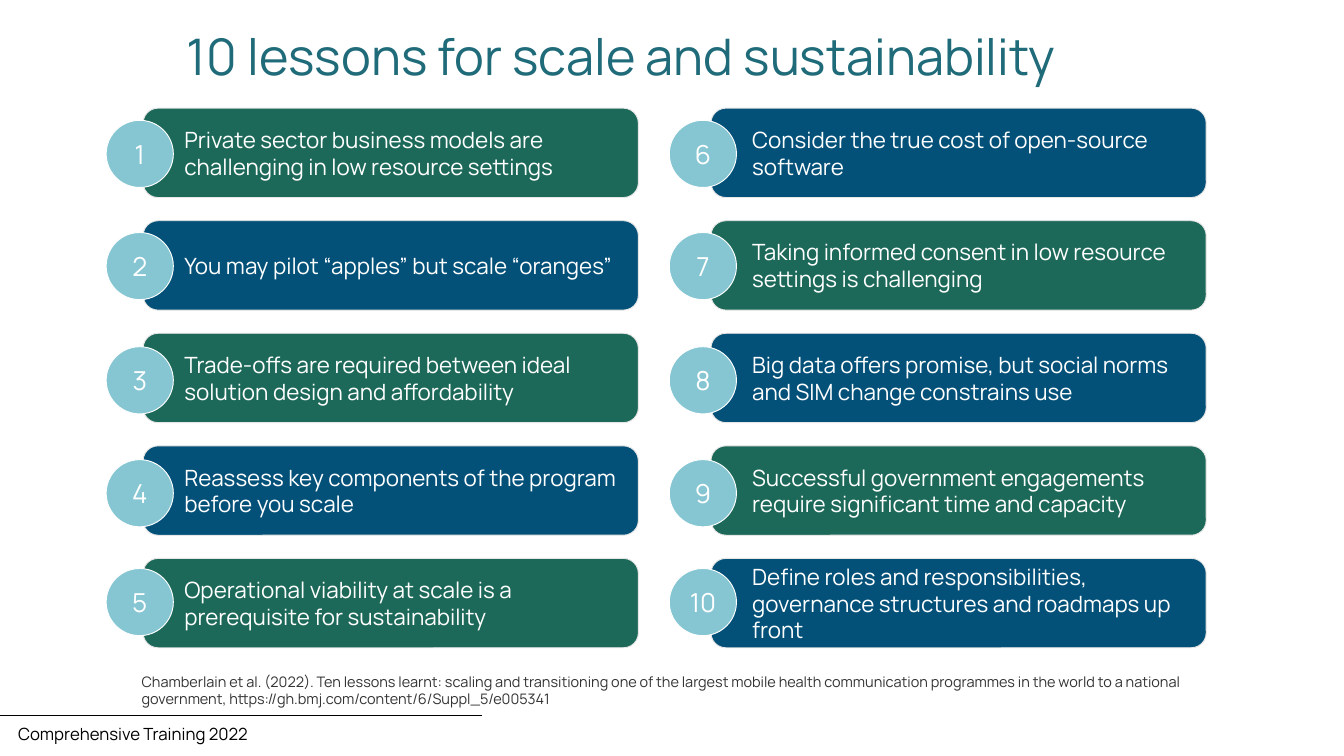
from pptx import Presentation
from pptx.dml.color import RGBColor
from pptx.enum import shapes, text
from pptx.oxml.ns import qn
from pptx.util import Inches, Pt
from lxml import etree

FONT = "Manrope"
TEAL = RGBColor(0x1F, 0x6B, 0x79)
GREEN = RGBColor(0x1D, 0x69, 0x59)
NAVY = RGBColor(0x03, 0x50, 0x78)
SKY = RGBColor(0x86, 0xC6, 0xD3)
PALE_GREY = RGBColor(0xE7, 0xE6, 0xE6)
DARK_GREY = RGBColor(0x33, 0x33, 0x33)
BLACK = RGBColor(0, 0, 0)
WHITE = RGBColor(0xFF, 0xFF, 0xFF)

LESSONS = [
    [
        "Private sector business models are challenging in low resource settings",
        "You may pilot “apples” but scale “oranges”",
        "Trade-offs are required between ideal solution design and affordability",
        "Reassess key components of the program before you scale",
        "Operational viability at scale is a prerequisite for sustainability",
    ],
    [
        "Consider the true cost of open-source software",
        "Taking informed consent in low resource settings is challenging",
        "Big data offers promise, but social norms and SIM change constrains use",
        "Successful government engagements require significant time and capacity",
        "Define roles and responsibilities, governance structures and roadmaps up front",
    ],
]
CITATION = (
    "Chamberlain et al. (2022). Ten lessons learnt: scaling and transitioning one of "
    "the largest mobile health communication programmes in the world to a national "
    "government, https://gh.bmj.com/content/6/Suppl_5/e005341"
)
BAR_LEFTS = [2.13, 10.58]
BADGE_LEFTS = [1.58, 9.96]
BADGE_TOPS = [1.79, 3.46, 5.16, 6.84, 8.46]
FIRST_BAR_TOP, BAR_PITCH = 1.61, 1.675


def write(shape, words, size, color, align=text.PP_ALIGN.LEFT,
          anchor=text.MSO_ANCHOR.TOP, indent=0, line_spacing=None):
    frame = shape.text_frame
    frame.word_wrap = True
    frame.vertical_anchor = anchor
    paragraph = frame.paragraphs[0]
    paragraph.alignment = align
    if line_spacing:
        paragraph.line_spacing = line_spacing
    if indent:
        properties = paragraph._p.get_or_add_pPr()
        properties.set("marL", str(Inches(indent)))
        properties.set("indent", "0")
    run = paragraph.add_run()
    run.text = words
    run.font.name = FONT
    run.font.size = Pt(size)
    run.font.color.rgb = color


def add_title(slide, words):
    title = slide.shapes.title
    title.left, title.top = Inches(2.68), Inches(0.46)
    title.width, title.height = Inches(18.75), Inches(0.75)
    title.text_frame.auto_size = text.MSO_AUTO_SIZE.NONE
    title.text_frame.margin_top = Inches(0.02)
    write(title, words, 54, TEAL, line_spacing=0.9)


def add_text(slide, left, top, width, height, words, **style):
    box = slide.shapes.add_textbox(
        Inches(left), Inches(top), Inches(width), Inches(height))
    write(box, words, **style)


def add_panel(slide, kind, left, top, width, height, fill, line, words, **style):
    panel = slide.shapes.add_shape(
        kind, Inches(left), Inches(top), Inches(width), Inches(height))
    panel.shadow.inherit = False
    panel.fill.solid()
    panel.fill.fore_color.rgb = fill
    panel.line.color.rgb = line
    panel.line.width = Pt(1)
    write(panel, words, color=WHITE, anchor=text.MSO_ANCHOR.MIDDLE, **style)


def add_rule(slide, left, right, y):
    rule = slide.shapes.add_connector(
        shapes.MSO_CONNECTOR.STRAIGHT,
        Inches(left), Inches(y), Inches(right), Inches(y))
    rule.line.color.rgb = BLACK
    rule.line.width = Pt(0.5)
    etree.SubElement(rule._element.spPr, qn("a:effectLst"))


def add_lesson_bars(slide):
    for column, lessons in enumerate(LESSONS):
        for row, lesson in enumerate(lessons):
            add_panel(slide, shapes.MSO_SHAPE.ROUNDED_RECTANGLE,
                      BAR_LEFTS[column], FIRST_BAR_TOP + row * BAR_PITCH, 7.37, 1.33,
                      (GREEN, NAVY)[(row + column) % 2], PALE_GREY,
                      lesson, size=24, indent=0.45)


def add_number_badges(slide):
    for column, left in enumerate(BADGE_LEFTS):
        for row, top in enumerate(BADGE_TOPS):
            number = column * len(BADGE_TOPS) + row + 1
            add_panel(slide, shapes.MSO_SHAPE.OVAL, left, top, 1, 1, SKY, WHITE,
                      str(number), size=28, align=text.PP_ALIGN.CENTER)


def main():
    deck = Presentation()
    deck.slide_width, deck.slide_height = Inches(20), Inches(11.25)
    slide = deck.slides.add_slide(deck.slide_layouts[5])
    add_text(slide, 0.17, 10.72, 6.58, 0.4, "Comprehensive Training 2022",
             size=18, color=BLACK)
    add_rule(slide, -0.08, 7.17, 10.65)
    add_title(slide, "10 lessons for scale and sustainability")
    add_text(slide, 2.01, 9.96, 16.91, 0.75, CITATION, size=15.5, color=DARK_GREY)
    add_lesson_bars(slide)
    add_number_badges(slide)
    deck.save("out.pptx")


if __name__ == "__main__":
    main()
